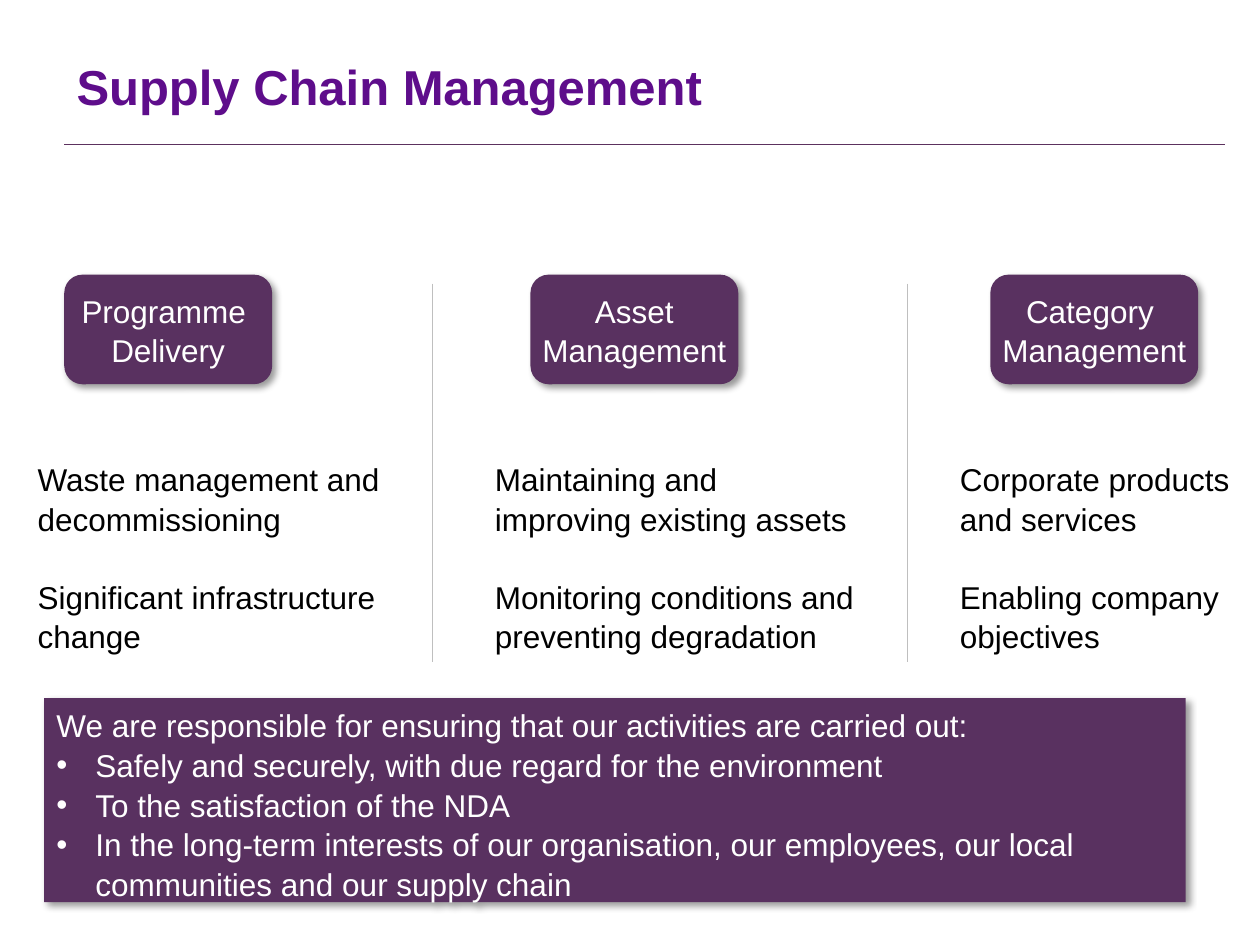
from lxml.etree import SubElement
from pptx import Presentation
from pptx.dml.color import RGBColor
from pptx.enum.shapes import MSO_CONNECTOR, MSO_SHAPE
from pptx.enum.text import MSO_ANCHOR as ANCHOR, PP_ALIGN as ALIGN
from pptx.oxml.ns import qn
from pptx.util import Inches, Pt

PURPLE = RGBColor(0x59, 0x31, 0x60)
TITLE = RGBColor(0x5E, 0x0D, 0x8B)
RULE = RGBColor(0x5C, 0x31, 0x5E)
GREY = RGBColor(0xBF, 0xBF, 0xBF)
WHITE = RGBColor(0xFF, 0xFF, 0xFF)
BLACK = RGBColor(0, 0, 0)

COLUMNS = [
    (0.51, ["Programme ", "Delivery"], 0.2, 3.06,
     ["Waste management and decommissioning", "Significant infrastructure change"]),
    (4.21, ["Asset", "Management"], 3.83, 3.06,
     ["Maintaining and improving existing assets",
      "Monitoring conditions and preventing degradation"]),
    (7.86, ["Category ", "Management"], 7.52, 2.6,
     ["Corporate products and services", "Enabling company objectives"]),
]
INTRO = "We are responsible for ensuring that our activities are carried out:"
DUTIES = [
    "Safely and securely, with due regard for the environment",
    "To the satisfaction of the NDA",
    "In the long-term interests of our organisation, our employees, "
    "our local communities and our supply chain",
]


def add_text(tf, lines, color, size=18, bold=False, align=ALIGN.LEFT, gap=0, spacing=1.05):
    """Write one paragraph per line and return the paragraphs."""
    for i, line in enumerate(lines):
        p = tf.add_paragraph() if i else tf.paragraphs[0]
        p.alignment = align
        p.line_spacing = spacing
        p.space_before = Pt(gap if i else 0)
        r = p.add_run()
        r.text = line
        r.font.name = "Arial"
        r.font.size = Pt(size)
        r.font.bold = bold
        r.font.color.rgb = color
    return tf.paragraphs


def add_bullet(p):
    """Give a paragraph a hanging round bullet."""
    pPr = p._p.get_or_add_pPr()
    pPr.set("marL", str(Inches(0.31)))
    pPr.set("indent", str(Inches(-0.31)))
    SubElement(pPr, qn("a:buFont"), typeface="Arial")
    SubElement(pPr, qn("a:buChar"), char="•")


def add_line(s, x1, y1, x2, y2, color, width):
    """Draw a straight line without a shadow."""
    line = s.shapes.add_connector(
        MSO_CONNECTOR.STRAIGHT, Inches(x1), Inches(y1), Inches(x2), Inches(y2))
    line.line.color.rgb = color
    line.line.width = Pt(width)
    SubElement(line._element.spPr, qn("a:effectLst"))


def add_panel(s, kind, x, y, w, h):
    """Draw a purple panel with a soft shadow to the lower right."""
    sp = s.shapes.add_shape(kind, Inches(x), Inches(y), Inches(w), Inches(h))
    sp.fill.solid()
    sp.fill.fore_color.rgb = PURPLE
    sp.line.fill.background()
    sp.shadow.inherit = False
    effects = sp._element.spPr.find(qn("a:effectLst"))
    shadow = SubElement(effects, qn("a:outerShdw"), blurRad=str(Pt(4)), dist=str(Pt(3)),
                        dir="2700000", algn="tl", rotWithShape="0")
    color = SubElement(shadow, qn("a:srgbClr"), val="000000")
    SubElement(color, qn("a:alpha"), val="40000")
    return sp


def add_text_box(s, x, y, w, h):
    """Add a wrapping text box and return its text frame."""
    tf = s.shapes.add_textbox(Inches(x), Inches(y), Inches(w), Inches(h)).text_frame
    tf.word_wrap = True
    return tf


def add_title(s, x, y, w, h):
    """Place the heading with the rule below it."""
    tf = add_text_box(s, x, y, w, h)
    tf.vertical_anchor = ANCHOR.MIDDLE
    add_text(tf, ["Supply Chain Management"], TITLE, 28, bold=True, spacing=0.9)
    add_line(s, x, y + h + 0.08, x + w, y + h + 0.08, RULE, 0.5)


def add_column(s, y, head_x, head, body_x, body_w, body):
    """Place a heading panel and the text beneath it."""
    sp = add_panel(s, MSO_SHAPE.ROUNDED_RECTANGLE, head_x, y, 1.65, 0.87)
    tf = sp.text_frame
    tf.word_wrap = False
    tf.vertical_anchor = ANCHOR.MIDDLE
    add_text(tf, head, WHITE, align=ALIGN.CENTER)
    add_text(add_text_box(s, body_x, y + 1.41, body_w, 1.65), body, BLACK, gap=21.7)


def add_duties(s, x, y, w, h):
    """Place the panel that lists the responsibilities."""
    tf = add_panel(s, MSO_SHAPE.RECTANGLE, x, y, w, h).text_frame
    tf.word_wrap = True
    tf.vertical_anchor = ANCHOR.TOP
    for p in add_text(tf, [INTRO] + DUTIES, WHITE)[1:]:
        add_bullet(p)


def main():
    """Build and save the slide."""
    prs = Presentation()
    prs.slide_width, prs.slide_height = Inches(10), Inches(7.5)
    s = prs.slides.add_slide(prs.slide_layouts[6])
    add_title(s, 0.51, 0.36, 9.21, 0.71)
    for column in COLUMNS:
        add_column(s, 2.18, *column)
    add_duties(s, 0.35, 5.54, 9.06, 1.62)
    for x in (3.43, 7.2):
        add_line(s, x, 2.25, x, 5.25, GREY, 0.75)
    prs.save("out.pptx")


if __name__ == "__main__":
    main()
